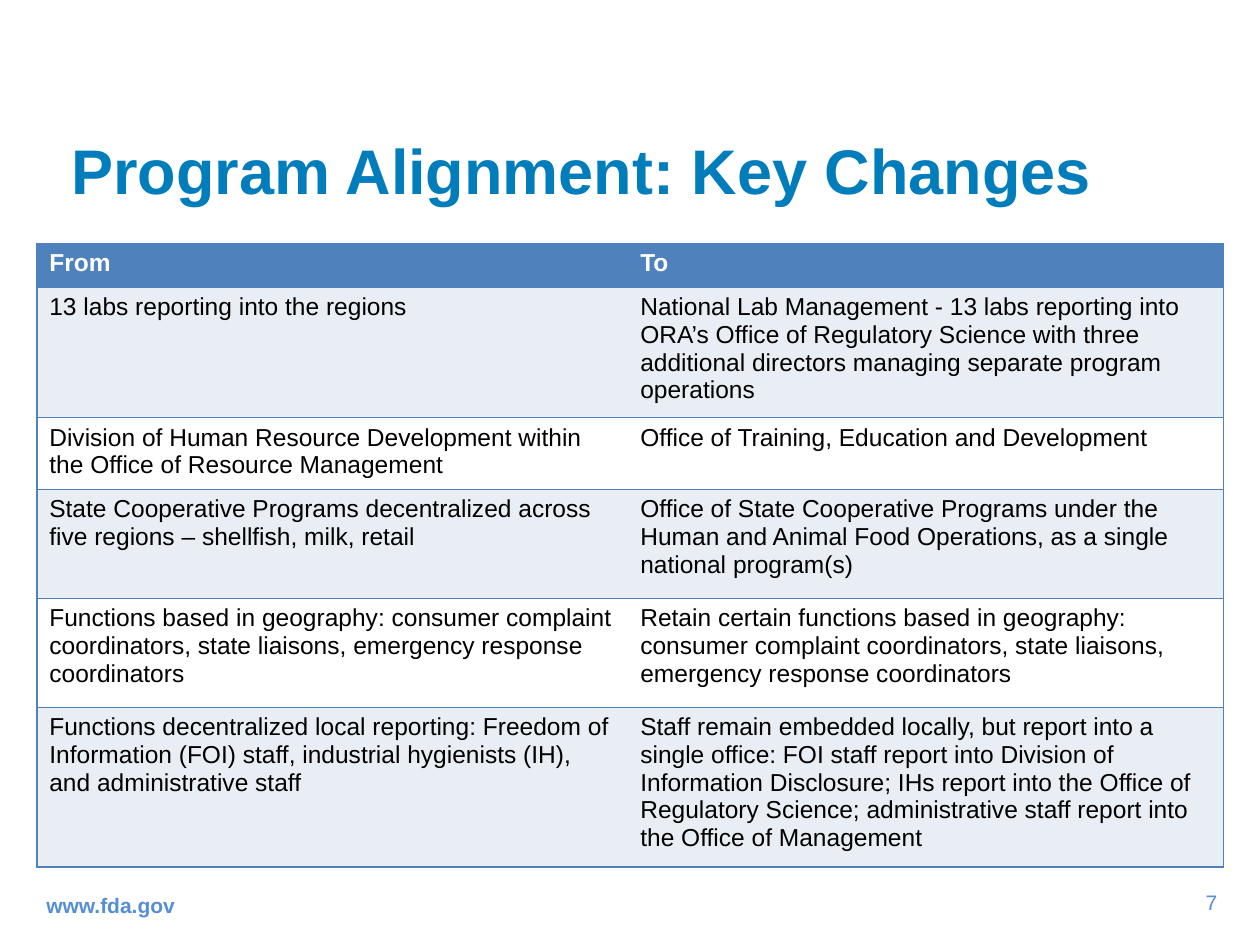
from dataclasses import dataclass

from lxml.etree import SubElement
from pptx import Presentation
from pptx.dml.color import RGBColor
from pptx.enum.text import MSO_ANCHOR as Anchor, PP_ALIGN as Align
from pptx.oxml.ns import qn
from pptx.util import Pt

FONT = "Arial"
TITLE_BLUE = RGBColor(0x00, 0x7D, 0xBA)
FOOTER_BLUE = RGBColor(0x55, 0x8E, 0xD5)
TABLE_BLUE = RGBColor(0x4F, 0x81, 0xBD)
BAND = RGBColor(0xE9, 0xED, 0xF4)
WHITE = RGBColor(0xFF, 0xFF, 0xFF)
BLACK = RGBColor(0x00, 0x00, 0x00)


@dataclass
class Label:
    text: str
    left: float
    top: float
    width: float
    height: float
    size: float
    color: RGBColor
    bold: bool = True
    align: Align = Align.LEFT
    anchor: Anchor = Anchor.MIDDLE


@dataclass
class Change:
    before: str
    after: str
    height: float


LABELS = [
    Label("7", 673.2, 504.7, 29.5, 21.6, 12, FOOTER_BLUE, False, Align.RIGHT, Anchor.TOP),
    Label("www.fda.gov", 19.4, 502.6, 228.2, 28.8, 12, FOOTER_BLUE),
    Label("Program Alignment: Key Changes", 33.8, 60.5, 670.3, 72.7, 36, TITLE_BLUE),
]

CHANGES = [
    Change("From", "To", 25.2),
    Change("13 labs reporting into the regions",
           "National Lab Management - 13 labs reporting into ORA’s Office of Regulatory "
           "Science with three additional directors managing separate program operations", 74.3),
    Change("Division of Human Resource Development within the Office of Resource Management",
           "Office of Training, Education and Development", 41),
    Change("State Cooperative Programs decentralized across five regions – shellfish, milk, retail",
           "Office of State Cooperative Programs under the Human and Animal Food Operations, "
           "as a single national program(s)", 62.3),
    Change("Functions based in geography: consumer complaint coordinators, state liaisons, "
           "emergency response coordinators",
           "Retain certain functions based in geography: consumer complaint coordinators, "
           "state liaisons, emergency response coordinators", 62.3),
    Change("Functions decentralized local reporting: Freedom of Information (FOI) staff, "
           "industrial hygienists (IH), and administrative staff",
           "Staff remain embedded locally, but report into a single office: FOI staff report "
           "into Division of Information Disclosure; IHs report into the Office of Regulatory "
           "Science; administrative staff report into the Office of Management", 90.9),
]
COLUMN_WIDTHS = (337.7, 340.6)


def style(p, size: float, color: RGBColor, bold: bool) -> None:
    p.font.name = FONT
    p.font.size = Pt(size)
    p.font.bold = bold
    p.font.color.rgb = color


def add_label(s, label: Label) -> None:
    box = s.shapes.add_textbox(Pt(label.left), Pt(label.top), Pt(label.width), Pt(label.height))
    tf = box.text_frame
    tf.word_wrap = True
    tf.vertical_anchor = label.anchor
    p = tf.paragraphs[0]
    p.text = label.text
    p.alignment = label.align
    style(p, label.size, label.color, label.bold)


def set_borders(cell, open_side: str) -> None:
    """Rule every side of the cell but the open one; call before filling the cell."""
    tc_pr = cell._tc.get_or_add_tcPr()
    for side in "LRTB":
        ln = SubElement(tc_pr, qn(f"a:ln{side}"), w=str(Pt(1)))
        if side == open_side:
            SubElement(ln, qn("a:noFill"))
        else:
            fill = SubElement(ln, qn("a:solidFill"))
            SubElement(fill, qn("a:srgbClr"), val=str(TABLE_BLUE))


def add_changes_table(s, changes: list[Change], left: float, top: float) -> None:
    height = sum(change.height for change in changes)
    table = s.shapes.add_table(len(changes), len(COLUMN_WIDTHS), Pt(left), Pt(top),
                               Pt(sum(COLUMN_WIDTHS)), Pt(height)).table
    for column, width in zip(table.columns, COLUMN_WIDTHS):
        column.width = Pt(width)
    for i, change in enumerate(changes):
        table.rows[i].height = Pt(change.height)
        header = i == 0
        fill = TABLE_BLUE if header else BAND if i % 2 else WHITE
        for j, (text, open_side) in enumerate(zip((change.before, change.after), "RL")):
            cell = table.cell(i, j)
            set_borders(cell, open_side)
            cell.fill.solid()
            cell.fill.fore_color.rgb = fill
            cell.text = text
            style(cell.text_frame.paragraphs[0], 14, WHITE if header else BLACK, header)


def main() -> None:
    prs = Presentation()
    prs.slide_width, prs.slide_height = Pt(720), Pt(540)
    s = prs.slides.add_slide(prs.slide_layouts[6])
    for label in LABELS:
        add_label(s, label)
    add_changes_table(s, CHANGES, 21, 139)
    prs.save("out.pptx")


if __name__ == "__main__":
    main()
